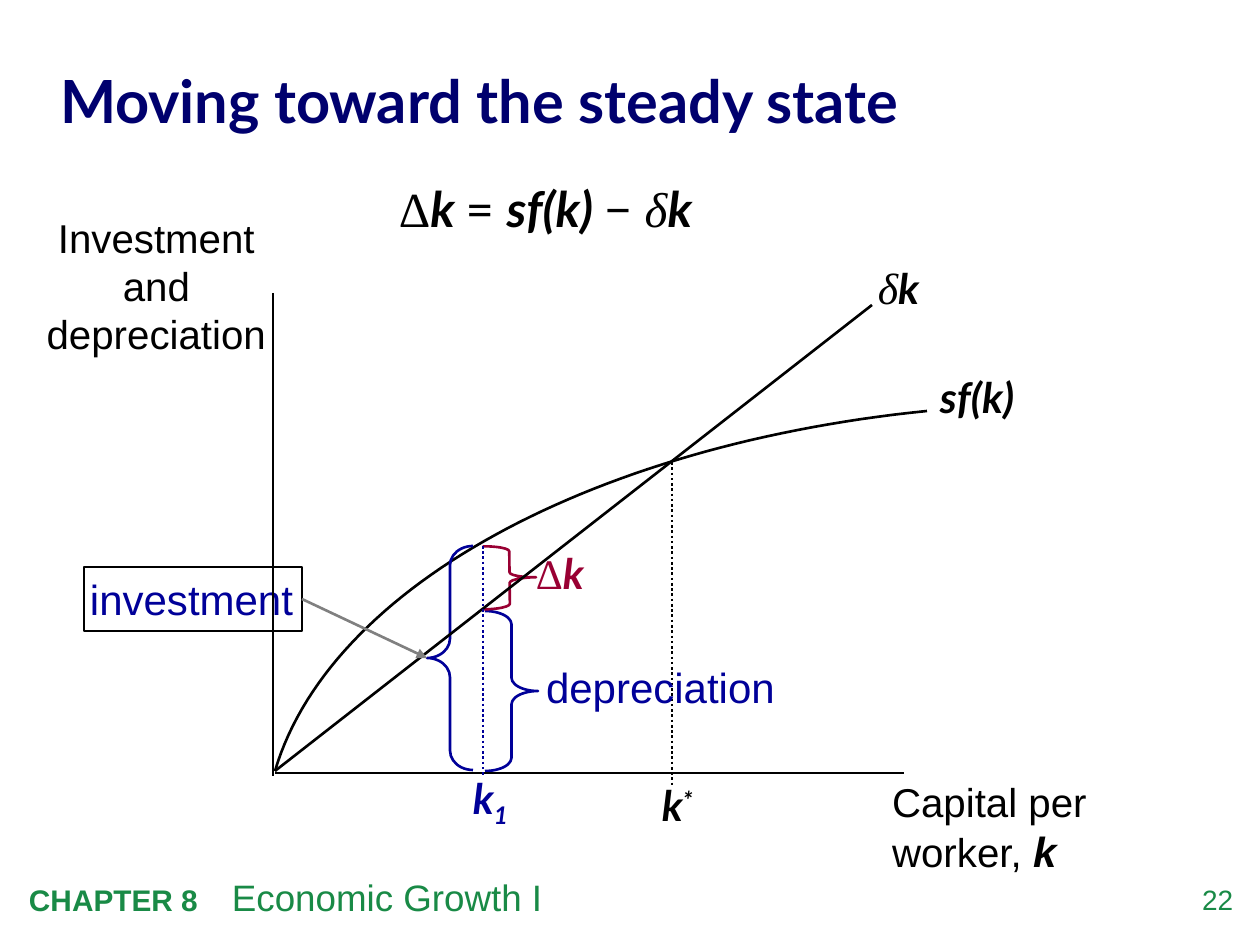
from lxml.etree import SubElement
from pptx import Presentation
from pptx.dml.color import RGBColor
from pptx.enum.dml import MSO_LINE
from pptx.enum.shapes import MSO_CONNECTOR, MSO_SHAPE
from pptx.enum.text import MSO_ANCHOR, MSO_AUTO_SIZE, PP_ALIGN
from pptx.oxml.ns import qn
from pptx.util import Emu, Pt

PX = 914400 / 126
BLACK = RGBColor(0x00, 0x00, 0x00)
WHITE = RGBColor(0xFF, 0xFF, 0xFF)
NAVY = RGBColor(0x00, 0x00, 0x6E)
BLUE = RGBColor(0x00, 0x00, 0x99)
CRIMSON = RGBColor(0x99, 0x00, 0x33)
GREEN = RGBColor(0x19, 0x8A, 0x46)
GRAY = RGBColor(0x80, 0x80, 0x80)

# Run formats: font attributes, without colour
ARIAL = {"name": "Arial", "size": Pt(23)}
ARIAL_LARGE = {"name": "Arial", "size": Pt(24)}
VARIABLE = {"name": "Lato", "size": Pt(24), "bold": True, "italic": True}
VARIABLE_LARGE = {**VARIABLE, "size": Pt(28)}
OPERATOR = {"name": "Lato", "size": Pt(28)}
GREEK = {"name": "Times New Roman", "size": Pt(24)}
GREEK_LARGE = {**GREEK, "size": Pt(28)}


def emu(*lengths):
    return [Emu(round(length * PX)) for length in lengths]


def write(shape, runs, color, anchor=MSO_ANCHOR.MIDDLE, align=PP_ALIGN.LEFT, inset=0,
          auto_size=MSO_AUTO_SIZE.SHAPE_TO_FIT_TEXT):
    """Fill a shape with one paragraph of (text, format, optional baseline) runs."""
    margin = emu(inset)[0]
    frame_format = {"word_wrap": True, "vertical_anchor": anchor, "auto_size": auto_size,
                    "margin_left": margin, "margin_right": margin,
                    "margin_top": margin, "margin_bottom": margin}
    for name, value in frame_format.items():
        setattr(shape.text_frame, name, value)
    paragraph = shape.text_frame.paragraphs[0]
    paragraph.alignment = align
    for text, run_format, *baseline in runs:
        run = paragraph.add_run()
        run.text = text
        for name, value in run_format.items():
            setattr(run.font, name, value)
        run.font.color.rgb = color
        if baseline:
            run._r.get_or_add_rPr().set("baseline", str(baseline[0] * 1000))
    return paragraph


presentation = Presentation()
presentation.slide_width, presentation.slide_height = emu(1260, 945)
slide = presentation.slides.add_slide(presentation.slide_layouts[5])
shapes = slide.shapes

title = shapes.title
title.left, title.top, title.width, title.height = emu(60, 44, 992, 107)
title_format = {"name": "Lato", "size": Pt(34), "bold": True}
paragraph = write(title, [("Moving toward the steady state", title_format)], NAVY,
                  auto_size=MSO_AUTO_SIZE.NONE)
paragraph.line_spacing = 1.05

# Footer
page_number = shapes.add_textbox(*emu(1164, 883, 69, 40))
write(page_number, [("22", {"name": "Arial", "size": Pt(16)})], GREEN,
      anchor=MSO_ANCHOR.TOP, align=PP_ALIGN.RIGHT)
footer = shapes.add_textbox(*emu(16, 869, 1031, 57))
paragraph = write(footer, [("CHAPTER 8\t", {"name": "Arial", "size": Pt(17), "bold": True}),
                           ("Economic Growth I", {"name": "Arial", "size": Pt(21)})],
                  GREEN, anchor=MSO_ANCHOR.TOP)
footer.text_frame.margin_left, footer.text_frame.margin_top = emu(13, 6)
tab_stops = SubElement(paragraph._p.get_or_add_pPr(), qn("a:tabLst"))
SubElement(tab_stops, qn("a:tab"), pos=str(emu(203)[0]), algn="l")

# Saving curve sf(k), sampled from a cubic Bézier
end, control_2, control_1, start = (927, 411), (590, 445), (329, 588), (275, 771)
curve_points = []
for step in range(61):
    t = step / 60
    weights = ((1 - t) ** 3, 3 * t * (1 - t) ** 2, 3 * t ** 2 * (1 - t), t ** 3)
    corners = (start, control_1, control_2, end)
    curve_points.append(tuple(
        round(sum(w * corner[axis] for w, corner in zip(weights, corners)) * PX)
        for axis in (0, 1)))
builder = shapes.build_freeform(*curve_points[0])
builder.add_line_segments(curve_points[1:], close=False)
curve = builder.convert_to_shape()
curve.shadow.inherit = False
curve.fill.background()
curve.line.color.rgb = BLACK
curve.line.width = Pt(1.5)

# Investment box and braces
investment = shapes.add_shape(MSO_SHAPE.RECTANGLE, *emu(84, 567, 218, 64))
investment.shadow.inherit = False
investment.fill.solid()
investment.fill.fore_color.rgb = WHITE
investment.line.color.rgb = BLACK
investment.line.width = Pt(1)
write(investment, [("investment", ARIAL_LARGE)], BLUE, inset=6)

for box, rotation, curl, color in (
    ((485, 611, 53, 160), 180, 0.25, BLUE),
    ((483, 546, 53, 63), 179.3, 0.1, CRIMSON),
    ((427, 546, 46, 224), 0, 0.42, BLUE),
):
    brace = shapes.add_shape(MSO_SHAPE.LEFT_BRACE, *emu(*box))
    brace.shadow.inherit = False
    brace.rotation = rotation
    brace.adjustments[0] = curl
    brace.fill.background()
    brace.line.color.rgb = color
    brace.line.width = Pt(1.5)
investment_brace = brace

# Axes, depreciation line, dotted guides and, last, the pointer
for ends, color, width, dash in (
    ((273, 293, 273, 776), BLACK, 1, None),
    ((275, 773, 904, 773), BLACK, 1, None),
    ((275, 771, 872, 305), BLACK, 1.5, None),
    ((672, 462, 672, 785), BLACK, 1.5, MSO_LINE.ROUND_DOT),
    ((483, 546, 483, 777), BLUE, 1.5, MSO_LINE.ROUND_DOT),
    ((302, 599, 427, 658), GRAY, 1.5, None),
):
    line = shapes.add_connector(MSO_CONNECTOR.STRAIGHT, *emu(*ends))
    line.line.color.rgb = color
    line.line.width = Pt(width)
    if dash:
        line.line.dash_style = dash
    SubElement(line._element.spPr, qn("a:effectLst"))
pointer = line
pointer.begin_connect(investment, 3)
pointer.end_connect(investment_brace, 1)
SubElement(pointer.line._get_or_add_ln(), qn("a:tailEnd"), type="triangle")

# Labels
K = ("k", VARIABLE)
delta = ("δ", {**GREEK, "size": Pt(25), "italic": True})
equation = [("Δ", GREEK_LARGE), ("k ", VARIABLE_LARGE), ("= ", OPERATOR),
            ("sf(k) ", VARIABLE_LARGE), ("− ", OPERATOR),
            ("δ", {**GREEK_LARGE, "italic": True}), ("k", VARIABLE_LARGE)]
for box, runs, color, align in (
    ((30, 213, 253, 145), [("Investment and depreciation", ARIAL)], BLACK, PP_ALIGN.CENTER),
    ((892, 778, 220, 98),
     [("Capital per worker, ", ARIAL), ("k", {**VARIABLE, "name": "Arial"})],
     BLACK, PP_ALIGN.LEFT),
    ((940, 372, 111, 50), [("sf(k)", VARIABLE)], BLACK, PP_ALIGN.LEFT),
    ((878, 261, 73, 53), [delta, K], BLACK, PP_ALIGN.LEFT),
    ((662, 780, 73, 50), [K, ("*", VARIABLE, 30)], BLACK, PP_ALIGN.LEFT),
    ((399, 178, 428, 59), equation, BLACK, PP_ALIGN.LEFT),
    ((546, 662, 231, 50), [("depreciation", ARIAL_LARGE)], BLUE, PP_ALIGN.LEFT),
    ((536, 548, 73, 50), [("Δ", GREEK), K], CRIMSON, PP_ALIGN.LEFT),
    ((473, 776, 73, 50), [K, ("1", VARIABLE, -25)], BLUE, PP_ALIGN.LEFT),
):
    write(shapes.add_textbox(*emu(*box)), runs, color, align=align)

presentation.save("out.pptx")
